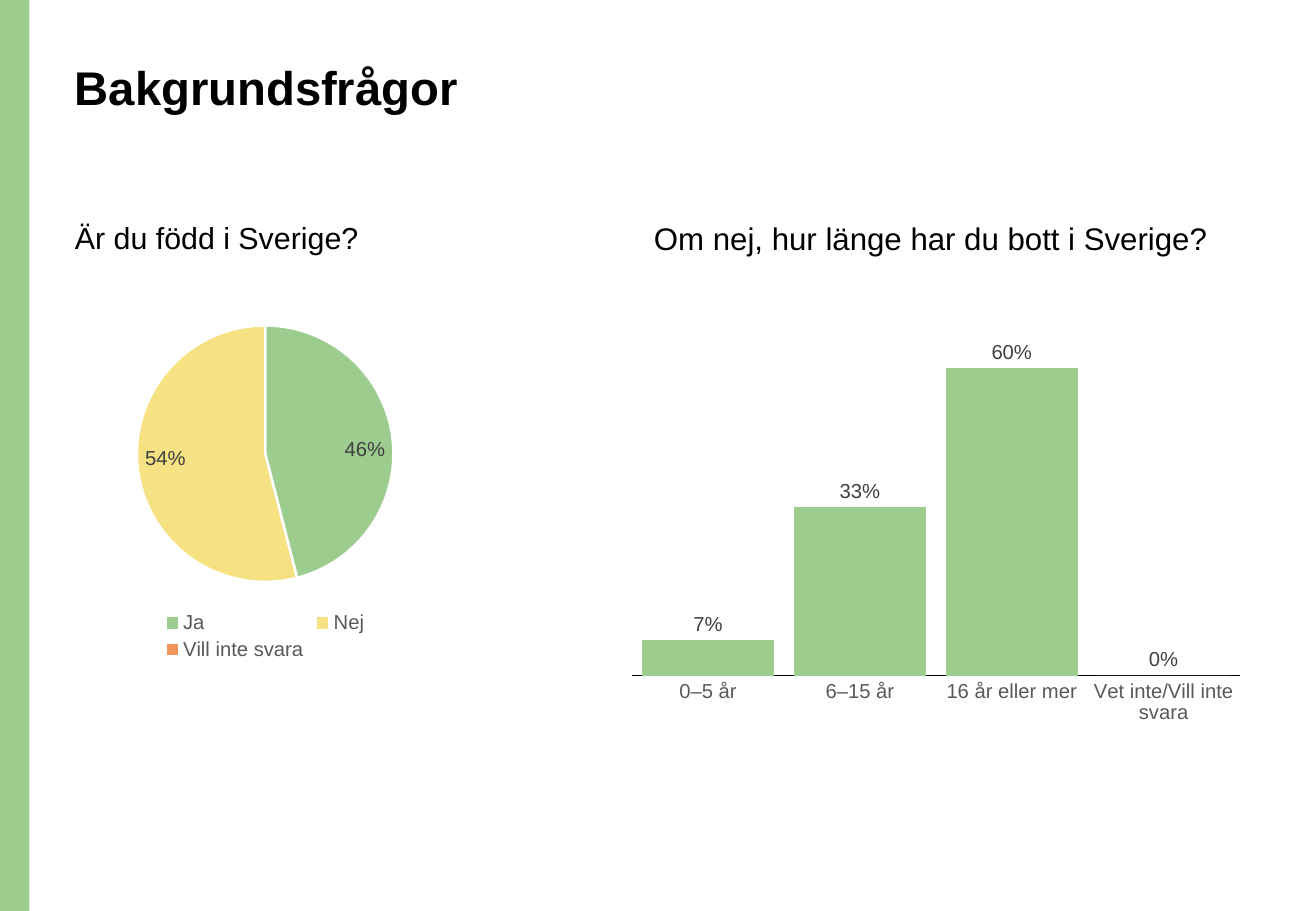
from pptx import Presentation
from pptx import util as u
from pptx.chart.data import CategoryChartData
from pptx.dml.color import RGBColor
from pptx.enum import chart as c, shapes, text

SCALE = u.Inches(1) // 120
FONT = "Arial"
COLORS = {"green": "9DCC8F", "yellow": "F6E183", "orange": "F29559", "white": "FFFFFF",
          "black": "000000", "label": "404040", "axis": "595959"}

SLIDE_SIZE = (1300, 900)
SIDEBAR = (0, 0, 29, 900)
TEXTS = [
    (0, "Bakgrundsfrågor", (62, 58, 1121, 122), 28, True),
    (1, "Är du född i Sverige?", (62, 215, 550, 55), 18, False),
    (3, "Om nej, hur länge har du bott i Sverige?", (634, 215, 604, 70), 18.5, False),
]
BORN = {"Ja": 0.46, "Nej": 0.54, "Vill inte svara": 0}
BORN_COLORS = ["green", "yellow", "orange"]
BORN_BOX = (62, 305, 400, 352)
YEARS = {"0–5 år": 0.07, "6–15 år": 0.33, "16 år eller mer": 0.6, "Vet inte/Vill inte svara": 0}
YEARS_BOX = (612, 305, 625, 418)


def emu(box):
    return [value * SCALE for value in box]


def color(name):
    return RGBColor.from_string(COLORS[name])


def style(font, size, name, bold=False):
    font.name = FONT
    font.size = u.Pt(size)
    font.bold = bold
    font.color.rgb = color(name)


def paint(fill, name):
    fill.solid()
    fill.fore_color.rgb = color(name)


def add_chart(slide, kind, answers, box, number_format, position):
    data = CategoryChartData()
    data.categories = list(answers)
    data.add_series("Series 1", list(answers.values()))
    chart = slide.shapes.add_chart(kind, *emu(box), data).chart
    chart.has_title = False
    chart.has_legend = False
    style(chart.font, 10, "black")
    plot = chart.plots[0]
    plot.has_data_labels = True
    labels = plot.data_labels
    labels.show_value = True
    labels.show_percentage = False
    labels.number_format = number_format
    labels.number_format_is_linked = False
    labels.position = position
    style(labels.font, 12, "label")
    return chart


def add_pie(slide):
    chart = add_chart(slide, c.XL_CHART_TYPE.PIE, BORN, BORN_BOX,
                      '[<0.01]"";[>0.01]0%', c.XL_LABEL_POSITION.INSIDE_END)
    for index, name in enumerate(BORN_COLORS):
        point = chart.plots[0].series[0].points[index]
        paint(point.format.fill, name)
        point.format.line.color.rgb = color("white")
        point.format.line.width = u.Pt(1.5)
    chart.has_legend = True
    chart.legend.position = c.XL_LEGEND_POSITION.BOTTOM
    chart.legend.include_in_layout = False
    style(chart.legend.font, 12, "axis")


def add_columns(slide):
    chart = add_chart(slide, c.XL_CHART_TYPE.COLUMN_CLUSTERED, YEARS, YEARS_BOX,
                      "0%", c.XL_LABEL_POSITION.OUTSIDE_END)
    plot = chart.plots[0]
    plot.vary_by_categories = False
    plot.gap_width = 15
    plot.overlap = -27
    paint(plot.series[0].format.fill, "green")
    chart.value_axis.visible = False
    chart.value_axis.has_major_gridlines = False
    chart.value_axis.minimum_scale = 0
    chart.value_axis.maximum_scale = 0.7
    axis = chart.category_axis
    axis.major_tick_mark = c.XL_TICK_MARK.NONE
    axis.format.line.color.rgb = color("black")
    axis.format.line.width = u.Pt(0.75)
    style(axis.tick_labels.font, 12, "axis")


def main():
    presentation = Presentation()
    presentation.slide_width, presentation.slide_height = emu(SLIDE_SIZE)
    slide = presentation.slides.add_slide(presentation.slide_layouts[4])

    sidebar = slide.shapes.add_shape(shapes.MSO_SHAPE.RECTANGLE, *emu(SIDEBAR))
    sidebar.shadow.inherit = False
    paint(sidebar.fill, "green")
    sidebar.line.fill.background()

    placeholders = {shape.placeholder_format.idx: shape for shape in slide.placeholders}
    for index, content, box, size, bold in TEXTS:
        shape = placeholders.pop(index)
        shape.left, shape.top, shape.width, shape.height = emu(box)
        frame = shape.text_frame
        frame.text = content
        frame.word_wrap = True
        frame.auto_size = text.MSO_AUTO_SIZE.NONE
        frame.vertical_anchor = text.MSO_ANCHOR.TOP
        paragraph = frame.paragraphs[0]
        paragraph.alignment = text.PP_ALIGN.LEFT
        paragraph.line_spacing = 0.9
        paragraph.space_before = u.Pt(0)
        style(paragraph.runs[0].font, size, "black", bold)
    for shape in placeholders.values():
        shape.element.getparent().remove(shape.element)

    add_pie(slide)
    add_columns(slide)
    presentation.save("out.pptx")


if __name__ == "__main__":
    main()
